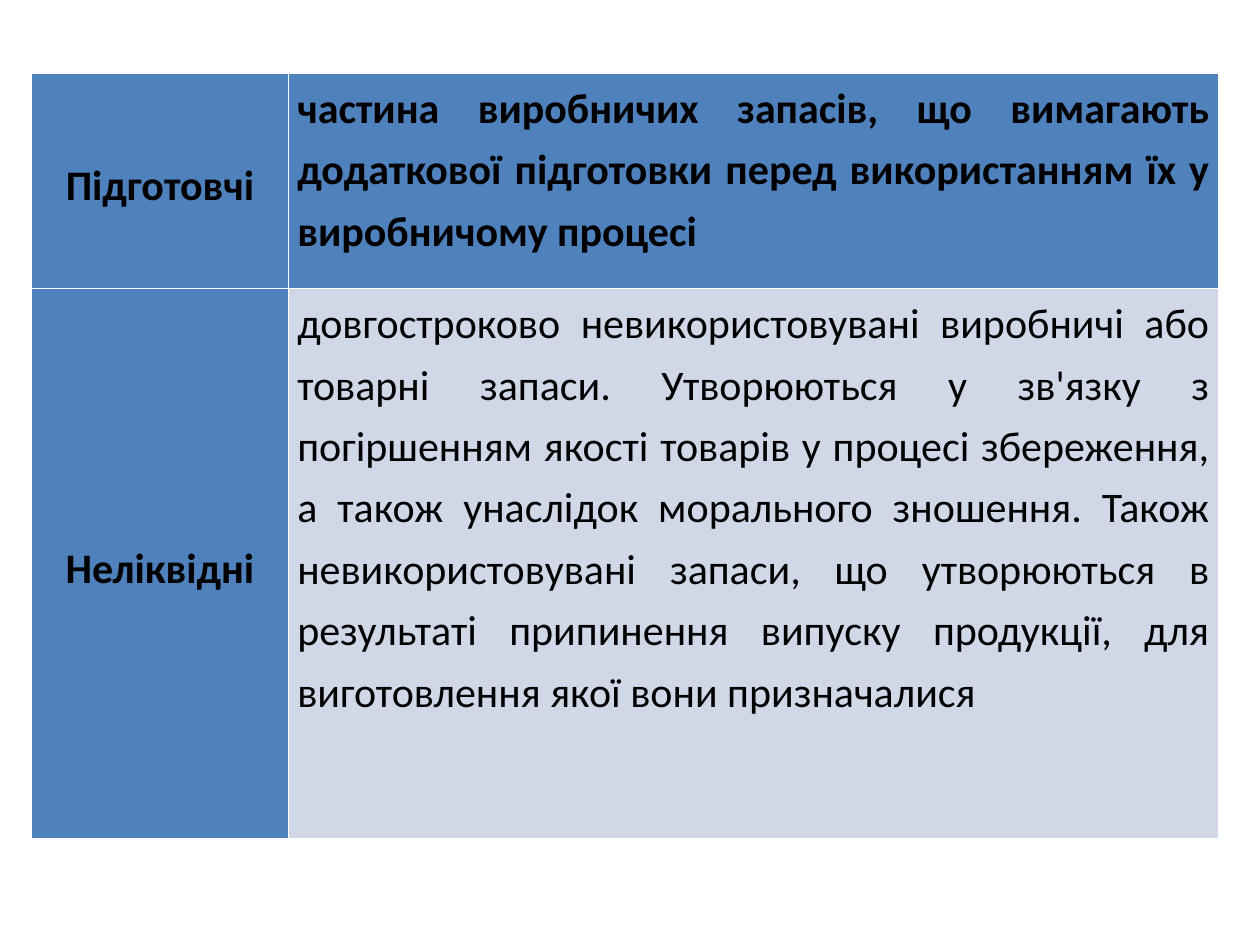
from pptx import Presentation
from pptx.dml.color import RGBColor
from pptx.enum.text import MSO_ANCHOR, PP_ALIGN
from pptx.util import Pt

PX = 9144
COLORS = {"head": "4F81BD", "body": "D0D8E8", "text": "000000"}
ROWS = [
    ("Підготовчі",
     "частина виробничих запасів, що вимагають додаткової підготовки "
     "перед використанням їх у виробничому процесі"),
    ("Неліквідні",
     "довгостроково невикористовувані виробничі або товарні запаси. "
     "Утворюються у зв'язку з погіршенням якості товарів у процесі "
     "збереження, а також унаслідок морального зношення. Також "
     "невикористовувані запаси, що утворюються в результаті припинення "
     "випуску продукції, для виготовлення якої вони призначалися"),
]


def color(name):
    return RGBColor.from_string(COLORS[name])


def fill_cell(cell, text, label, head):
    cell.fill.solid()
    cell.fill.fore_color.rgb = color("head" if head else "body")
    cell.margin_left = cell.margin_right = 7 * PX
    cell.margin_top = cell.margin_bottom = 0
    cell.vertical_anchor = MSO_ANCHOR.MIDDLE if label else MSO_ANCHOR.TOP
    para = cell.text_frame.paragraphs[0]
    para.alignment = PP_ALIGN.CENTER if label else PP_ALIGN.JUSTIFY
    para.line_spacing = 1.2
    run = para.add_run()
    run.text = text
    run.font.name = "Calibri"
    run.font.size = Pt(24)
    run.font.bold = head
    run.font.color.rgb = color("text")


def add_stocks(slide, left, top, width, height):
    box = [side * PX for side in (left, top, width, height)]
    table = slide.shapes.add_table(len(ROWS), 2, *box).table
    table.first_col = True
    label, first = 204, 171
    for col, size in zip(table.columns, (label, width - label)):
        col.width = size * PX
    for row, size in zip(table.rows, (first, height - first)):
        row.height = size * PX
    for r, texts in enumerate(ROWS):
        for c, text in enumerate(texts):
            fill_cell(table.cell(r, c), text, c == 0, r == 0 or c == 0)


def main():
    deck = Presentation()
    deck.slide_width, deck.slide_height = 1000 * PX, 750 * PX
    slide = deck.slides.add_slide(deck.slide_layouts[6])
    add_stocks(slide, 25, 58, 942, 608)
    deck.save("out.pptx")


if __name__ == "__main__":
    main()
